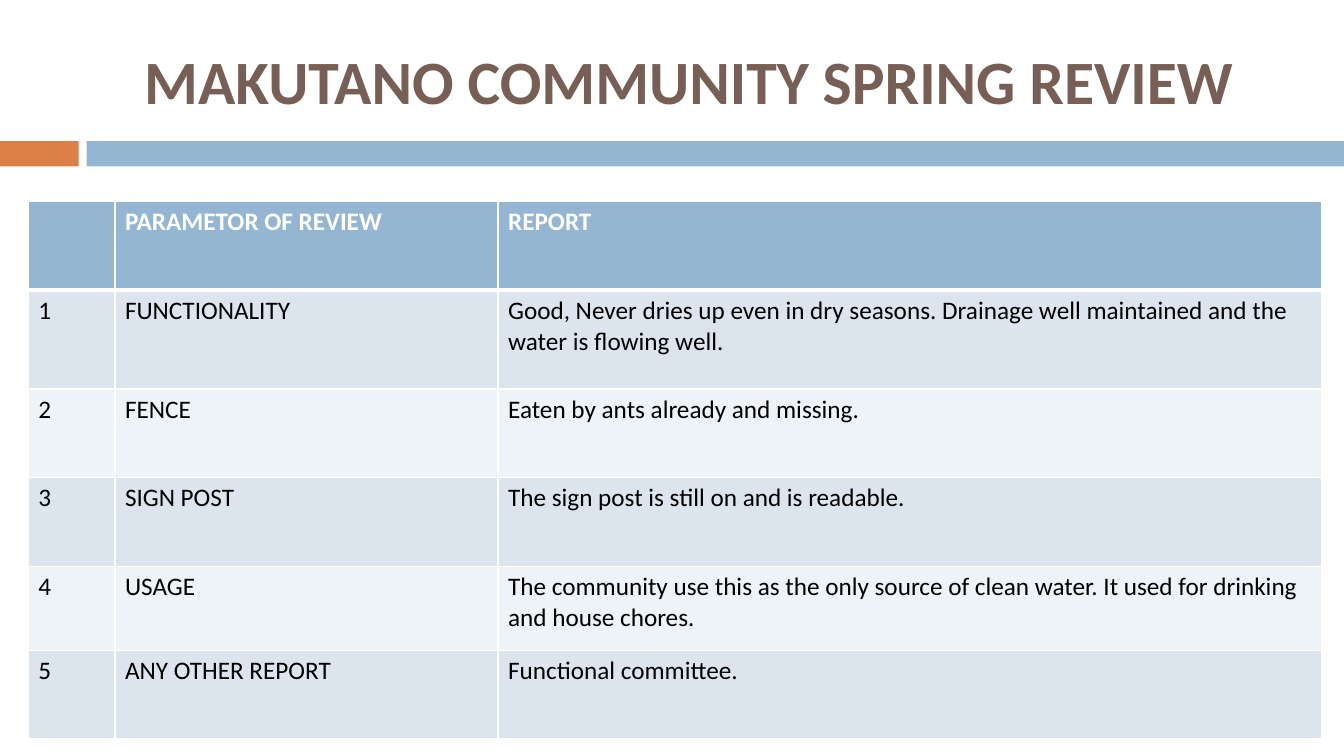
"""Build the Makutano community spring review slide."""
import pptx
import pptx.dml.color
import pptx.enum.shapes
import pptx.enum.text
import pptx.oxml.ns
import pptx.util
from lxml import etree
from pptx.util import Inches


def color(value):
    return pptx.dml.color.RGBColor.from_string(value)


def add_border(cell, side, points):
    qn = pptx.oxml.ns.qn
    properties = cell._tc.get_or_add_tcPr()
    line = etree.SubElement(properties, qn(f"a:ln{side}"), w=str(pptx.util.Pt(points)))
    fill = etree.SubElement(line, qn("a:solidFill"))
    etree.SubElement(fill, qn("a:srgbClr"), val="FFFFFF")


presentation = pptx.Presentation()
presentation.slide_width = Inches(13.33)
presentation.slide_height = Inches(7.5)
slide = presentation.slides.add_slide(presentation.slide_layouts[6])

for left, width, fill in [(0, 0.78, "DD8047"), (0.86, 12.47, "94B6D2")]:
    bar = slide.shapes.add_shape(
        pptx.enum.shapes.MSO_SHAPE.RECTANGLE,
        Inches(left), Inches(1.4), Inches(width), Inches(0.25))
    bar.shadow.inherit = False
    bar.fill.solid()
    bar.fill.fore_color.rgb = color(fill)
    bar.line.fill.background()

title = slide.shapes.add_textbox(Inches(0.89), Inches(0.25), Inches(11.89), Inches(1.08))
title.text_frame.word_wrap = True
title.text_frame.vertical_anchor = pptx.enum.text.MSO_ANCHOR.MIDDLE
paragraph = title.text_frame.paragraphs[0]
paragraph.text = "MAKUTANO COMMUNITY SPRING REVIEW"
paragraph.alignment = pptx.enum.text.PP_ALIGN.CENTER
paragraph.font.name = "Calibri"
paragraph.font.size = pptx.util.Pt(44)
paragraph.font.bold = True
paragraph.font.color.rgb = color("775F55")

rows = [
    ("", "PARAMETOR OF REVIEW", "REPORT"),
    ("1", "FUNCTIONALITY",
     "Good, Never dries up even in dry seasons. Drainage well maintained "
     "and the water is flowing well."),
    ("2", "FENCE", "Eaten by ants already and missing."),
    ("3", "SIGN POST", "The sign post is still on and is readable."),
    ("4", "USAGE",
     "The community use this as the only source of clean water. "
     "It used for drinking and house chores."),
    ("5", "ANY OTHER REPORT", "Functional committee."),
]
column_widths = [0.86, 3.8, 8.17]
row_heights = [0.88, 0.98, 0.88, 0.88, 0.83, 0.88]

table = slide.shapes.add_table(
    len(rows), len(column_widths), Inches(0.28), Inches(2),
    Inches(sum(column_widths)), Inches(sum(row_heights))).table
for column, width in zip(table.columns, column_widths):
    column.width = Inches(width)

for row_index, (texts, height) in enumerate(zip(rows, row_heights)):
    table.rows[row_index].height = Inches(height)
    is_header = row_index == 0
    if is_header:
        row_fill = "94B6D2"
    else:
        row_fill = "DCE5EE" if row_index % 2 else "EEF3F7"
    for column_index, text in enumerate(texts):
        cell = table.cell(row_index, column_index)
        add_border(cell, "L", 1)
        add_border(cell, "R", 1)
        add_border(cell, "T", 3 if row_index == 1 else 1)
        add_border(cell, "B", 3 if is_header else 1)
        cell.fill.solid()
        cell.fill.fore_color.rgb = color(row_fill)
        paragraph = cell.text_frame.paragraphs[0]
        paragraph.text = text
        paragraph.font.name = "Calibri"
        paragraph.font.size = pptx.util.Pt(18)
        paragraph.font.bold = is_header
        paragraph.font.color.rgb = color("FFFFFF" if is_header else "000000")

presentation.save("out.pptx")
